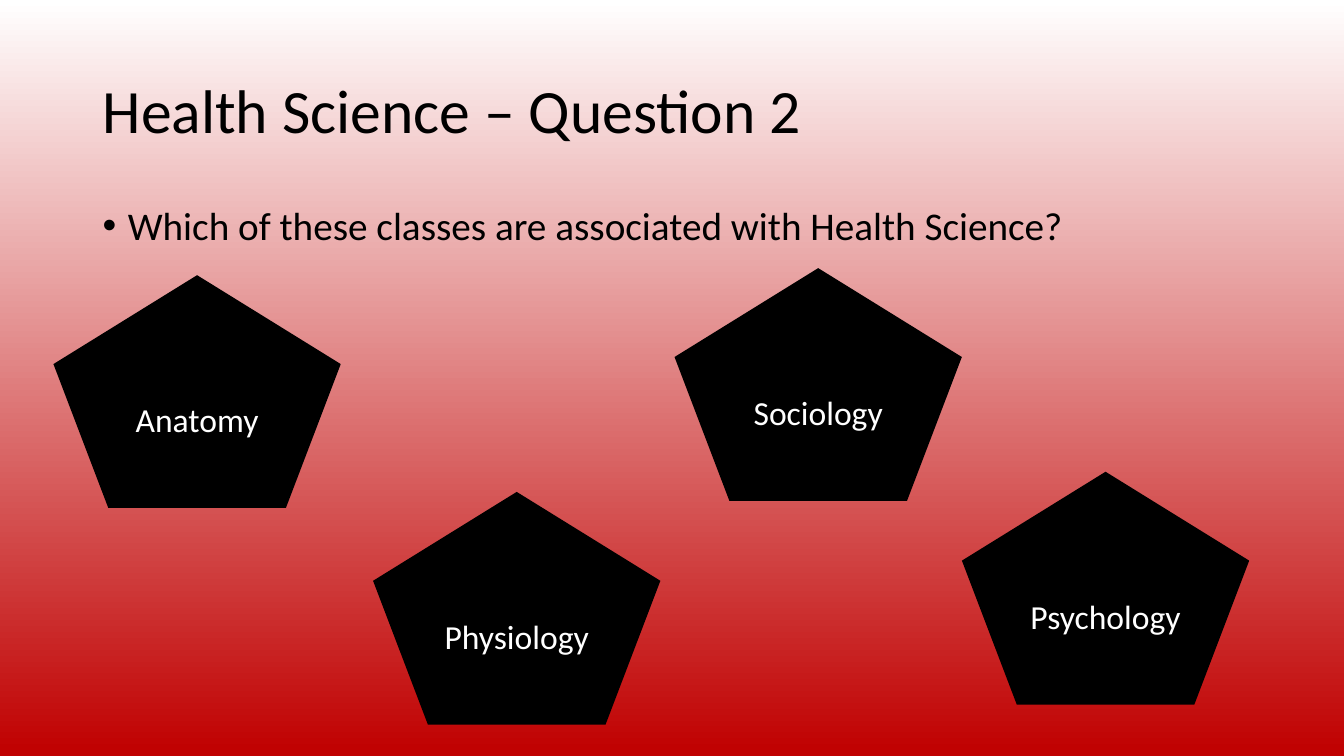
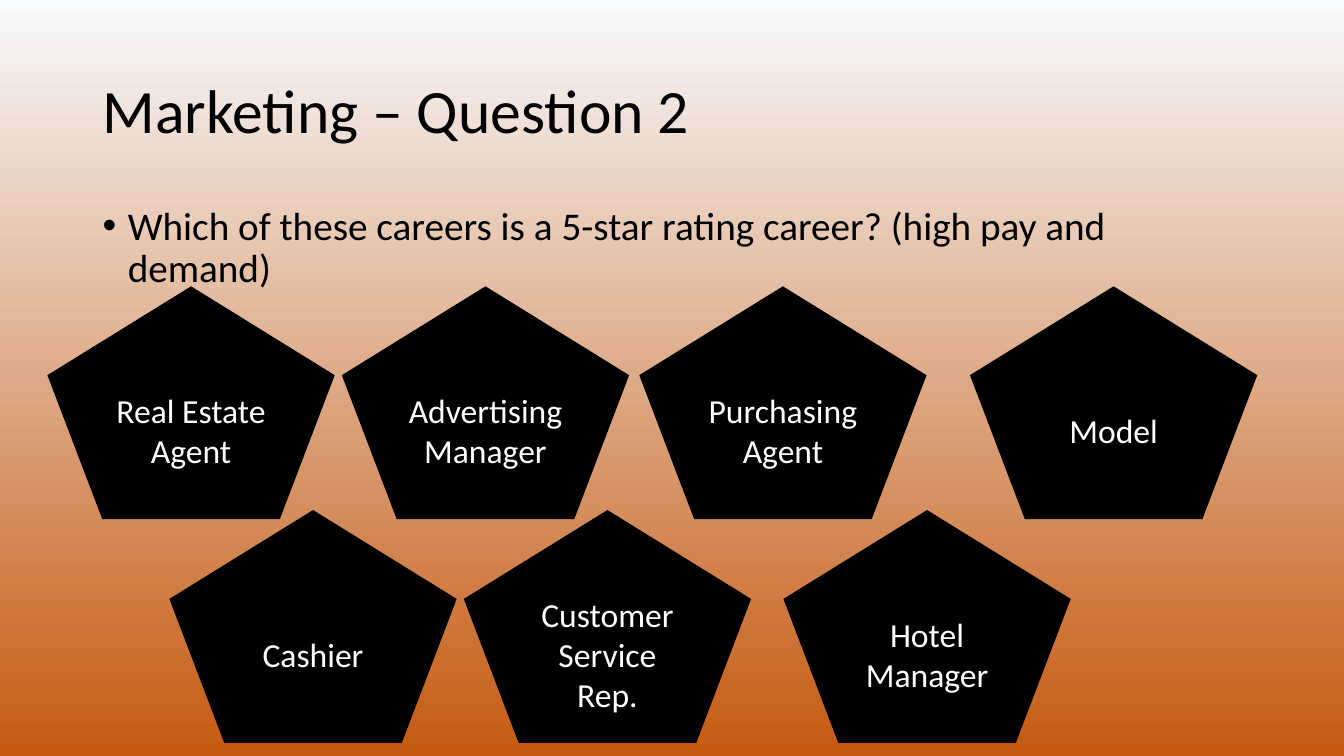
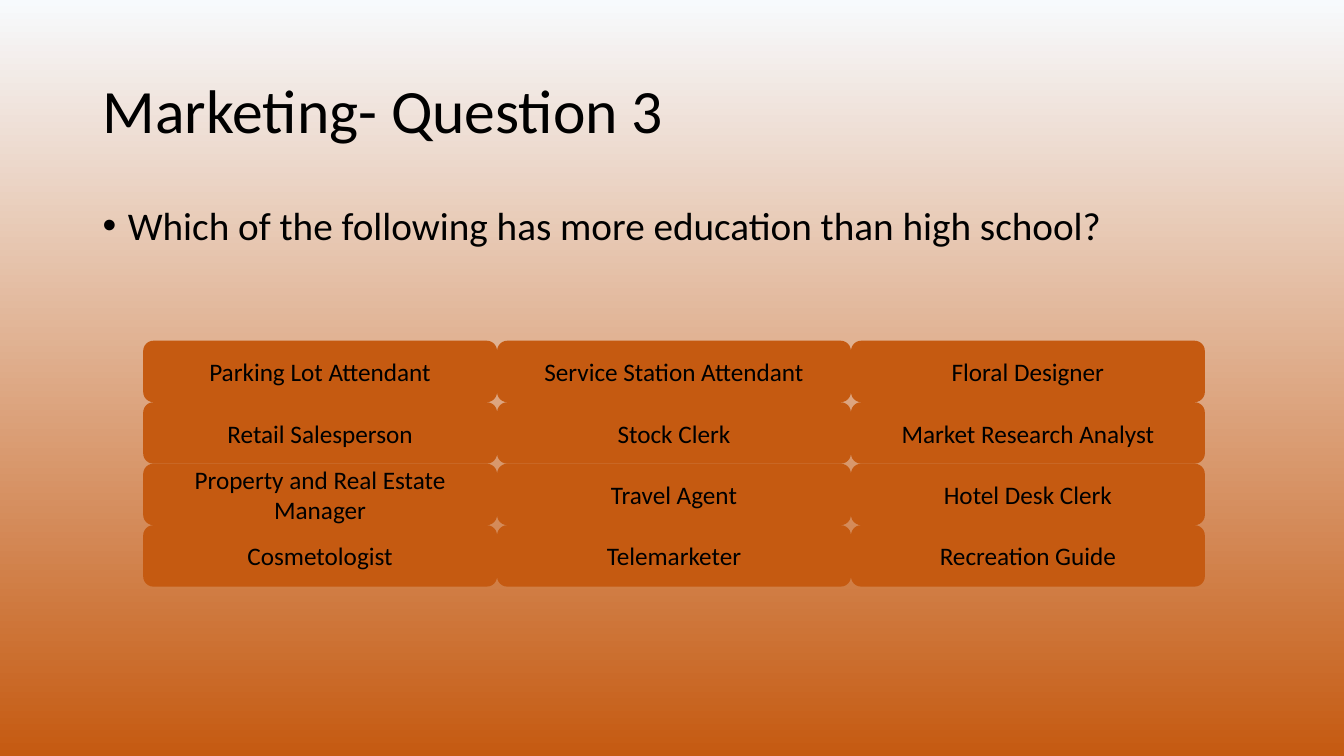
from lxml import etree
from pptx import Presentation
from pptx import util as u
from pptx.dml.color import RGBColor
from pptx.enum import shapes, text
from pptx.oxml.ns import qn

FONT = "Calibri"
BLACK, WHITE, RED, ORANGE, PALE = "000000", "FFFFFF", "C00000", "C55A11", "F7FAFD"
PENTAGON_SIZE = (2.85, 2.31)
BUTTON_SIZE = (3.51, 0.61)
GRID_LEFT, GRID_TOP = 1.42, 3.38

# Each answer pentagon: label, left, top
PENTAGON_SLIDES = [
    {
        "title": "Health Science – Question 2",
        "question": "Which of these classes are associated with Health Science?",
        "background": (WHITE, RED),
        "answers": [
            ("Anatomy", 0.53, 2.73),
            ("Physiology", 3.7, 4.88),
            ("Sociology", 6.69, 2.66),
            ("Psychology", 9.54, 4.68),
        ],
    },
    {
        "title": "Marketing – Question 2",
        "question": "Which of these careers is a 5-star rating career? (high pay and demand)",
        "background": (PALE, ORANGE),
        "answers": [
            ("Real Estate Agent", 0.47, 2.84),
            ("Advertising Manager", 3.39, 2.84),
            ("Purchasing Agent", 6.34, 2.84),
            ("Model", 9.62, 2.84),
            ("Cashier", 1.68, 5.06),
            ("Customer Service Rep.", 4.6, 5.06),
            ("Hotel Manager", 7.77, 5.06),
        ],
    },
]

BUTTON_SLIDE = {
    "title": "Marketing- Question 3",
    "question": "Which of the following has more education than high school?",
    "background": (PALE, ORANGE),
    "columns": [
        ["Parking Lot Attendant", "Retail Salesperson",
         "Property and Real Estate Manager", "Cosmetologist"],
        ["Service Station Attendant", "Stock Clerk", "Travel Agent", "Telemarketer"],
        ["Floral Designer", "Market Research Analyst", "Hotel Desk Clerk", "Recreation Guide"],
    ],
}


def rgb(value):
    return RGBColor.from_string(value)


def write(frame, words, size, color, anchor):
    """Fill a text frame with one formatted paragraph and return it."""
    frame.word_wrap = True
    frame.vertical_anchor = anchor
    para = frame.paragraphs[0]
    para.text = words
    font = para.runs[0].font
    font.name, font.size, font.color.rgb = FONT, u.Pt(size), rgb(color)
    return para


def add_text(page, words, top, height, size, anchor):
    box = page.shapes.add_textbox(u.Inches(0.92), u.Inches(top), u.Inches(11.5), u.Inches(height))
    para = write(box.text_frame, words, size, BLACK, anchor)
    para.line_spacing = 0.9
    return para


def add_bullet(para):
    props = para._p.get_or_add_pPr()
    props.set("marL", str(u.Inches(0.25)))
    props.set("indent", str(u.Inches(-0.25)))
    etree.SubElement(props, qn("a:buFont")).set("typeface", "Arial")
    etree.SubElement(props, qn("a:buChar")).set("char", "•")


def add_question_page(deck, content):
    """Add a page with its gradient background, title and question."""
    page = deck.slides.add_slide(deck.slide_layouts[6])
    fill = page.background.fill
    fill.gradient()
    fill.gradient_angle = 270
    for stop, color in zip(fill.gradient_stops, content["background"]):
        stop.color.rgb = rgb(color)
    add_text(page, content["title"], 0.4, 1.45, 44, text.MSO_ANCHOR.MIDDLE)
    question = add_text(page, content["question"], 2, 4.76, 28, text.MSO_ANCHOR.TOP)
    question.space_before = u.Pt(10)
    add_bullet(question)
    return page


def add_answer(page, kind, label, left, top, size, fill, font_size, color):
    shape = page.shapes.add_shape(kind, *(u.Inches(n) for n in (left, top, *size)))
    shape.shadow.inherit = False
    shape.fill.solid()
    shape.fill.fore_color.rgb = rgb(fill)
    shape.line.fill.background()
    para = write(shape.text_frame, label, font_size, color, text.MSO_ANCHOR.MIDDLE)
    para.alignment = text.PP_ALIGN.CENTER


def main():
    deck = Presentation()
    deck.slide_width, deck.slide_height = u.Inches(13.33), u.Inches(7.5)

    for content in PENTAGON_SLIDES:
        page = add_question_page(deck, content)
        for label, left, top in content["answers"]:
            add_answer(page, shapes.MSO_SHAPE.REGULAR_PENTAGON, label, left, top,
                       PENTAGON_SIZE, BLACK, 24, WHITE)

    page = add_question_page(deck, BUTTON_SLIDE)
    width, height = BUTTON_SIZE
    for column, labels in enumerate(BUTTON_SLIDE["columns"]):
        for row, label in enumerate(labels):
            add_answer(page, shapes.MSO_SHAPE.ROUNDED_RECTANGLE, label,
                       GRID_LEFT + column * width, GRID_TOP + row * height,
                       BUTTON_SIZE, ORANGE, 18, BLACK)

    deck.save("out.pptx")


if __name__ == "__main__":
    main()
